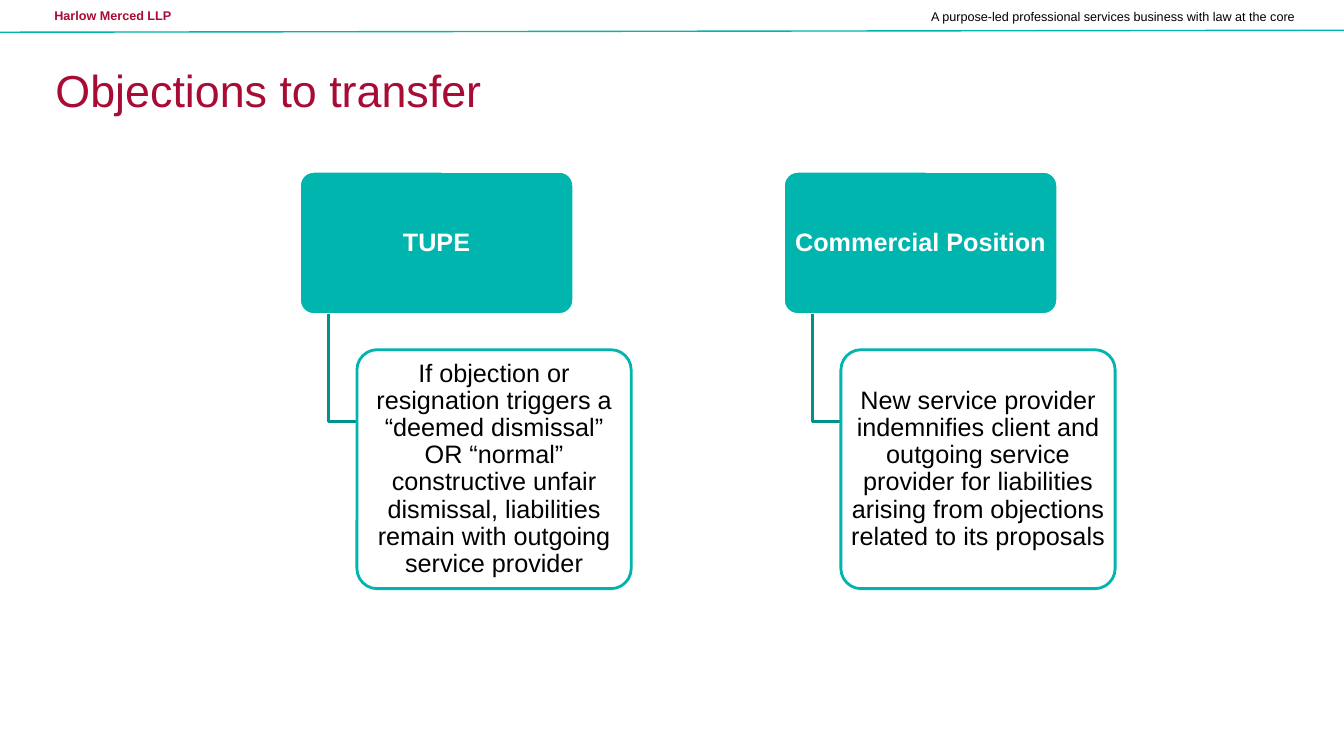
from dataclasses import dataclass

from lxml.etree import SubElement
from pptx import Presentation
from pptx.dml.color import RGBColor
from pptx.enum.shapes import MSO_CONNECTOR, MSO_SHAPE
from pptx.enum.text import MSO_ANCHOR, MSO_AUTO_SIZE, PP_ALIGN
from pptx.oxml.ns import qn
from pptx.util import Inches, Pt


@dataclass(frozen=True)
class Theme:
    face: str = "Arial"
    red: RGBColor = RGBColor(0xA8, 0x0C, 0x35)
    teal: RGBColor = RGBColor(0x00, 0xB5, 0xAD)
    deep: RGBColor = RGBColor(0x00, 0x91, 0x8B)
    white: RGBColor = RGBColor(0xFF, 0xFF, 0xFF)
    black: RGBColor = RGBColor(0x00, 0x00, 0x00)
    small: int = 9
    body: int = 18
    head: int = 32


THEME = Theme()

# Left edge of each branch, its heading and its detail
BRANCHES = [
    (2.97, "TUPE",
     "If objection or resignation triggers a “deemed dismissal” OR “normal” "
     "constructive unfair dismissal, liabilities remain with outgoing "
     "service provider"),
    (7.77, "Commercial Position",
     "New service provider indemnifies client and outgoing service provider "
     "for liabilities arising from objections related to its proposals"),
]
WIDE = 2.72
INDENT = 0.57
TOP, HIGH = 1.7, 1.42
LOW_TOP, LOW_HIGH = 3.47, 2.37
ELBOW = 4.18


def assign(item, values):
    for name, value in values.items():
        setattr(item, name, value)


def write(shape, text, size, color, bold=False, align=PP_ALIGN.LEFT, space=1.0):
    frame = shape.text_frame
    frame.text = text
    assign(frame, {"word_wrap": True, "auto_size": MSO_AUTO_SIZE.NONE,
                   "vertical_anchor": MSO_ANCHOR.MIDDLE})
    para = frame.paragraphs[0]
    assign(para, {"alignment": align, "line_spacing": space})
    font = para.runs[0].font
    assign(font, {"name": THEME.face, "size": Pt(size), "bold": bold})
    font.color.rgb = color


def stroke(shape, color, width):
    shape.line.color.rgb = color
    shape.line.width = Pt(width)


def label(slide, area, text, color, **style):
    box = slide.shapes.add_textbox(*map(Inches, area))
    write(box, text, THEME.small, color, **style)


def rule(slide, start, end):
    line = slide.shapes.add_connector(
        MSO_CONNECTOR.STRAIGHT, *map(Inches, start + end))
    stroke(line, THEME.teal, 1)
    SubElement(line._element.spPr, qn("a:effectLst"))


def card(slide, area, radius, text, fill, edge, color, bold=False, alpha=None):
    box = slide.shapes.add_shape(
        MSO_SHAPE.ROUNDED_RECTANGLE, *map(Inches, area))
    box.shadow.inherit = False
    box.adjustments[0] = radius / min(area[2:])
    box.fill.solid()
    box.fill.fore_color.rgb = fill
    if alpha:
        tint = box._element.spPr.find(qn("a:solidFill"))[0]
        SubElement(tint, qn("a:alpha"), val=str(alpha * 1000))
    stroke(box, edge, 2)
    write(box, text, THEME.body, color, bold, PP_ALIGN.CENTER, 0.9)
    # Rounded corners already push the text inward
    inset = Inches(0.08 - 0.29 * radius)
    sides = ("left", "right", "top", "bottom")
    assign(box.text_frame, {f"margin_{side}": inset for side in sides})


def elbow(slide, left, top, right, bottom):
    pen = slide.shapes.build_freeform(
        Inches(left), Inches(top), scale=1.0)
    pen.add_line_segments(
        [(Inches(left), Inches(bottom)), (Inches(right), Inches(bottom))],
        close=False)
    bend = pen.convert_to_shape()
    bend.shadow.inherit = False
    bend.fill.background()
    stroke(bend, THEME.deep, 2)


def branch(slide, left, heading, detail):
    card(slide, (left, TOP, WIDE, HIGH), 0.14, heading,
         THEME.teal, THEME.white, THEME.white, bold=True)
    elbow(slide, left + INDENT / 2, TOP + HIGH, left + INDENT, ELBOW)
    card(slide, (left + INDENT, LOW_TOP, WIDE, LOW_HIGH), 0.2, detail,
         THEME.white, THEME.teal, THEME.black, alpha=90)


def main():
    deck = Presentation()
    assign(deck, {"slide_width": Inches(13.33), "slide_height": Inches(7.5)})
    slide = deck.slides.add_slide(deck.slide_layouts[5])

    # Header strip
    label(slide, (0.44, 0.03, 5.28, 0.25), "Harlow Merced LLP",
          THEME.red, bold=True)
    label(slide, (5.33, 0.02, 7.61, 0.29),
          "A purpose-led professional services business with law at the core",
          THEME.black, align=PP_ALIGN.RIGHT)
    rule(slide, (0, 0.32), (13.33, 0.3))

    # Title
    title = slide.shapes.title
    assign(title, {"left": Inches(0.45), "top": Inches(0.39),
                   "width": Inches(12.44), "height": Inches(1)})
    write(title, "Objections to transfer", THEME.head, THEME.red)

    # Branches
    for left, heading, detail in BRANCHES:
        branch(slide, left, heading, detail)

    deck.save("out.pptx")


if __name__ == "__main__":
    main()
